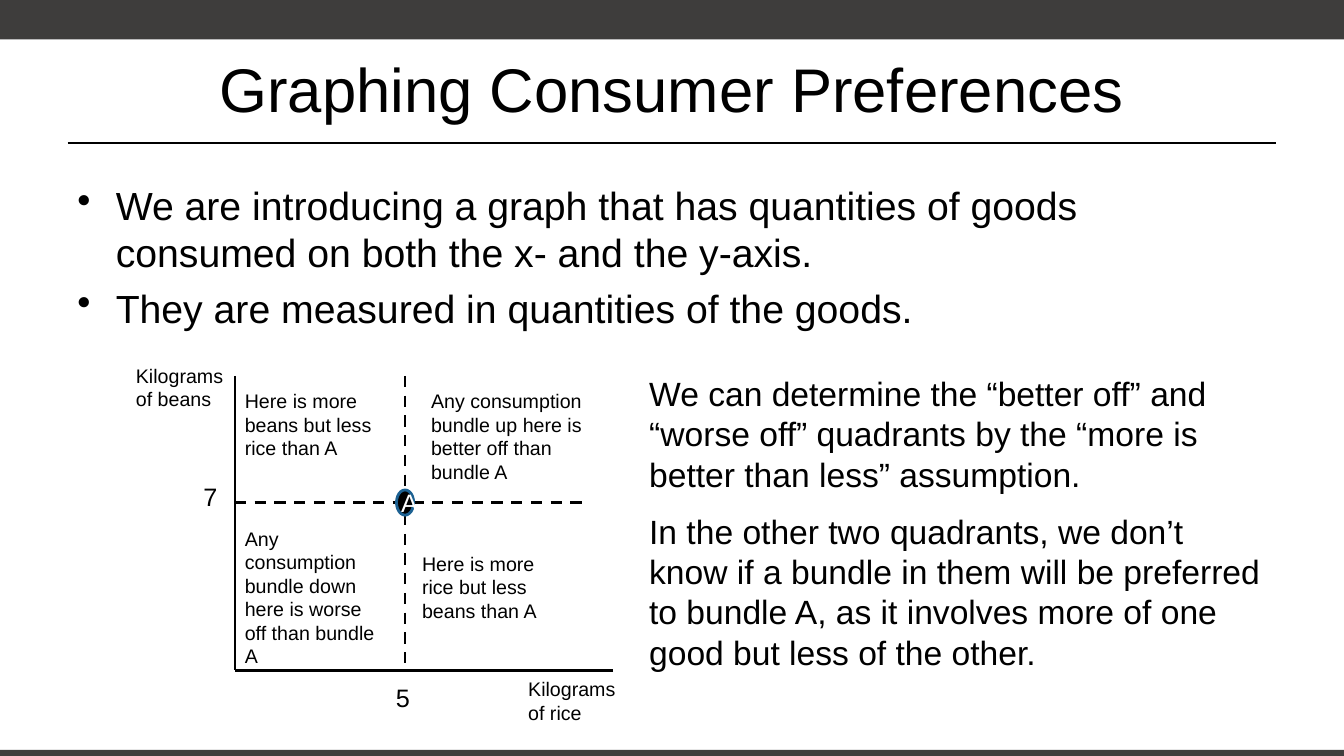
import pptx
import pptx.util
import pptx.dml.color
import pptx.enum.dml
import pptx.enum.shapes
import pptx.enum.text
import pptx.oxml.ns
from lxml import etree

In, Pt = pptx.util.Inches, pptx.util.Pt
SHAPE = pptx.enum.shapes.MSO_SHAPE
ALIGN = pptx.enum.text.PP_ALIGN
ANCHOR = pptx.enum.text.MSO_ANCHOR
W, H = 13.33, 7.5
MARGIN = 0.67
COLORS = {"band": "3E3D3C", "ink": "000000", "ring": "1C6192", "paper": "FFFFFF"}


def rgb(name):
    return pptx.dml.color.RGBColor.from_string(COLORS[name])


def write(sp, lines, size, color="ink", wrap=True, **formats):
    """Fill a shape with one paragraph per line; formats are paragraph attributes."""
    tf = sp.text_frame
    tf.word_wrap = wrap
    for i, line in enumerate(lines):
        p = tf.paragraphs[0] if i == 0 else tf.add_paragraph()
        for name, value in formats.items():
            setattr(p, name, value)
        r = p.add_run()
        r.text = line
        for name, value in {"name": "Arial", "size": Pt(size)}.items():
            setattr(r.font, name, value)
        r.font.color.rgb = rgb(color)
    return tf


def add_text(s, box, lines, size, **formats):
    sp = s.shapes.add_textbox(*map(In, box))
    return write(sp, lines, size, **formats)


def add_line(s, start, end, width, dashed=False):
    ln = s.shapes.add_connector(pptx.enum.shapes.MSO_CONNECTOR.STRAIGHT,
                                *map(In, start + end))
    ln.line.color.rgb = rgb("ink")
    ln.line.width = Pt(width)
    if dashed:
        ln.line.dash_style = pptx.enum.dml.MSO_LINE.DASH
    etree.SubElement(ln._element.spPr, pptx.oxml.ns.qn("a:effectLst"))


def add_solid(s, kind, box, fill, ring=None):
    sp = s.shapes.add_shape(kind, *map(In, box))
    sp.shadow.inherit = False
    sp.fill.solid()
    sp.fill.fore_color.rgb = rgb(fill)
    if ring:
        sp.line.color.rgb = rgb(ring)
        sp.line.width = Pt(2)
    else:
        sp.line.fill.background()
    return sp


def add_bands(s):
    for top, height in ((0, 0.39), (7.44, 0.1)):
        add_solid(s, SHAPE.RECTANGLE, (0, top, W, height), "band")


def add_title(s, x, y, w, h):
    tf = add_text(s, (x, y, w, h), ["Graphing Consumer Preferences"], 44,
                  alignment=ALIGN.CENTER)
    tf.vertical_anchor = ANCHOR.MIDDLE
    add_line(s, (x, y + 1.17), (x + w, y + 1.17), 1.25)


def add_bullets(s, x, y, w, h):
    tf = add_text(s, (x, y, w, h), [
        "We are introducing a graph that has quantities of goods consumed "
        "on both the x- and the y-axis.",
        "They are measured in quantities of the goods."], 28, space_before=Pt(6))
    for p in tf.paragraphs:
        pPr = p._p.get_or_add_pPr()
        pPr.set("marL", str(In(0.38)))
        pPr.set("indent", str(-In(0.38)))
        etree.SubElement(pPr, pptx.oxml.ns.qn("a:buChar"), char="•")


def add_explanation(s, x, y, w, h):
    add_text(s, (x, y, w, h), [
        "We can determine the “better off” and “worse off” quadrants by the "
        "“more is better than less” assumption.",
        "In the other two quadrants, we don’t know if a bundle in them will be "
        "preferred to bundle A, as it involves more of one good but less of the "
        "other."], 24, space_before=Pt(12))


def add_graph(s, x, y, w, h):
    """Draw the axes in the box, with bundle A at the crossing of the dashed lines."""
    right, bottom = x + w, y + h
    ax, ay = x + 0.45 * w, y + 0.43 * h
    add_line(s, (x, y), (x, bottom), 2)
    add_line(s, (right, bottom), (x, bottom), 2)
    add_line(s, (ax, y), (ax, bottom), 2, dashed=True)
    add_line(s, (x, ay), (right - 0.25, ay), 2, dashed=True)

    dot_w, dot_h = 0.17, 0.25
    dot = add_solid(s, SHAPE.FLOWCHART_CONNECTOR,
                    (ax - dot_w / 2, ay - dot_h / 2, dot_w, dot_h), "ink", "ring")
    tf = write(dot, ["A"], 18, color="paper", alignment=ALIGN.CENTER)
    tf.vertical_anchor = ANCHOR.MIDDLE

    add_text(s, (x - 1.08, y - 0.17, 1.07, 0.57), ["Kilograms", "of beans"], 14)
    add_text(s, (right - 0.94, bottom + 0.02, 1.11, 0.57),
             ["Kilograms", "of rice"], 14, wrap=False)
    add_text(s, (x - 0.41, ay - 0.26, 0.33, 0.4), ["7"], 18)
    add_text(s, (ax - 0.19, bottom + 0.07, 0.34, 0.4), ["5"], 18, wrap=False)

    quadrants = (
        (x, y + 0.08, 1.5, 1.04, "Here is more beans but less rice than A"),
        (ax + 0.16, y + 0.08, 1.74, 1.04,
         "Any consumption bundle up here is better off than bundle A"),
        (x, ay + 0.19, 1.62, 1.31,
         "Any consumption bundle down here is worse off than bundle A"),
        (ax + 0.07, ay + 0.44, 1.39, 0.81, "Here is more rice but less beans than A"),
    )
    for *box, text in quadrants:
        add_text(s, box, [text], 14)


def main():
    prs = pptx.Presentation()
    prs.slide_width, prs.slide_height = In(W), In(H)
    s = prs.slides.add_slide(prs.slide_layouts[6])
    content_w = W - 2 * MARGIN
    add_bands(s)
    add_title(s, MARGIN, 0.25, content_w, 1.25)
    add_bullets(s, MARGIN, 1.75, content_w, 1.67)
    add_explanation(s, 6.34, 3.65, 6.32, 3.1)
    add_graph(s, 2.33, 3.73, 3.75, 2.92)
    prs.save("out.pptx")


if __name__ == "__main__":
    main()
